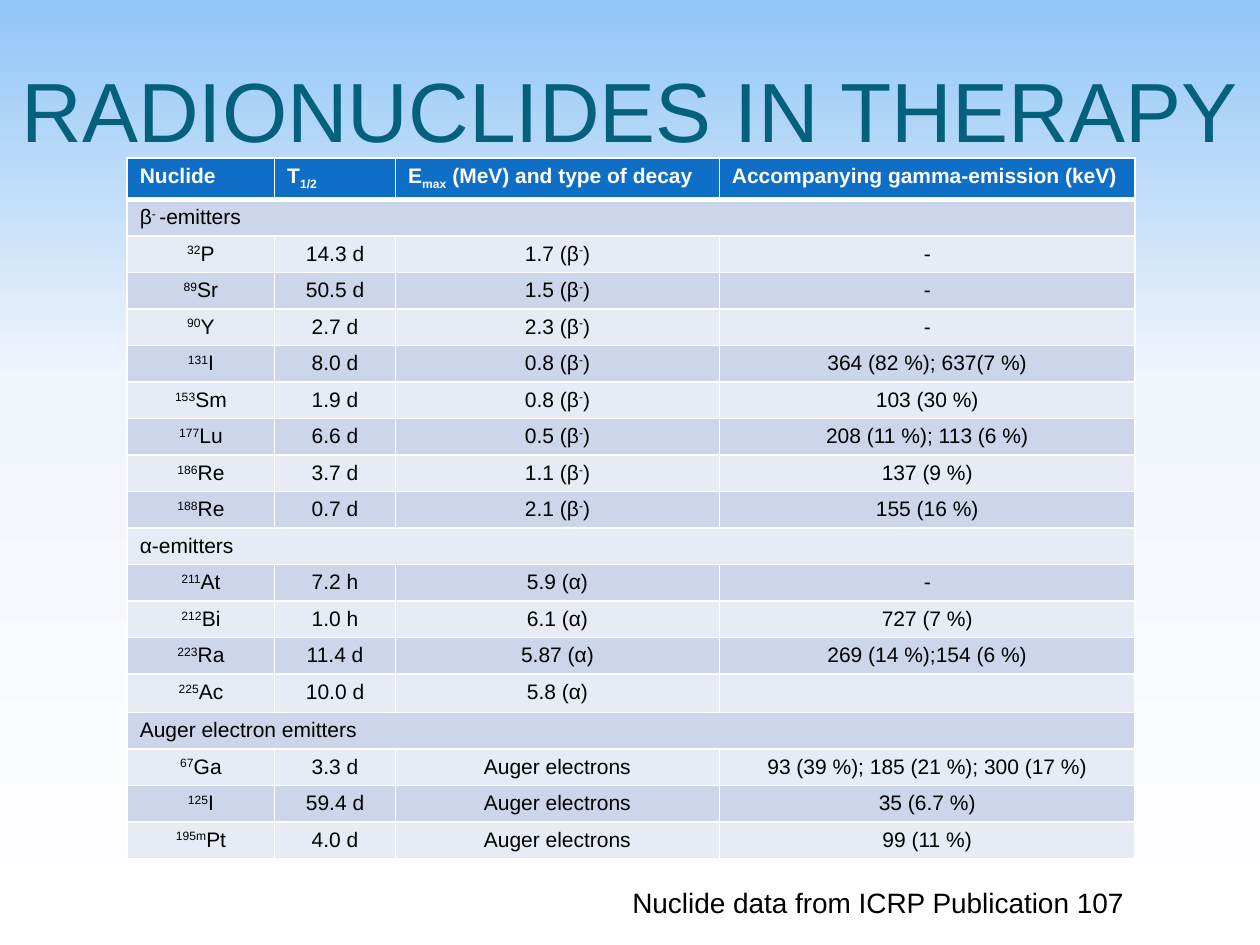
from copy import deepcopy
from dataclasses import dataclass

from lxml.etree import SubElement
from pptx import Presentation
from pptx.dml.color import RGBColor
from pptx.enum.text import MSO_ANCHOR, PP_ALIGN
from pptx.oxml.ns import qn
from pptx.util import Inches, Pt

SLIDE_WIDTH, SLIDE_HEIGHT = Inches(10), Inches(7.5)
COLUMN_SHARES = (0.117, 0.096, 0.257, 0.33)
HEADER_HEIGHT, ROW_HEIGHT = Inches(0.33), Inches(0.29)
SUPERSCRIPT, SUBSCRIPT = "30000", "-25000"
SHIFT_MARK = "|"


@dataclass(frozen=True)
class Theme:
    font: str = "Arial"
    title: str = "04617B"
    text: str = "000000"
    header: str = "0F6FC6"
    header_text: str = "FFFFFF"
    border: str = "FFFFFF"
    bands: tuple = ("E7EBF5", "CCD5EA")
    sky: tuple = ((0, "91C6F7"), (0.4, "F1F5FC"), (1, "FFFFFF"))
    title_size: int = 48
    table_size: int = 12
    caption_size: int = 16
    thin_line: int = 1
    thick_line: int = 3


@dataclass(frozen=True)
class Area:
    left: float
    top: float
    width: float
    height: float

    def lengths(self) -> tuple:
        return (int(self.left * SLIDE_WIDTH), int(self.top * SLIDE_HEIGHT),
                int(self.width * SLIDE_WIDTH), int(self.height * SLIDE_HEIGHT))


@dataclass(frozen=True)
class Nuclide:
    mass: str
    symbol: str
    half_life: str
    decay: str
    gamma: str = "-"

    def texts(self) -> tuple:
        return (f"|{self.mass}|{self.symbol}", self.half_life, self.decay, self.gamma)


@dataclass(frozen=True)
class Group:
    name: str
    nuclides: tuple


THEME = Theme()
TITLE_AREA = Area(0, 0.028, 1, 0.167)
TABLE_AREA = Area(0.101, 0.167, 0.8, 0.74)
CAPTION_AREA = Area(0.492, 0.931, 0.423, 0.056)
HEADERS = ("Nuclide", "T|1/2|", "E|max| (MeV) and type of decay",
           "Accompanying gamma-emission (keV)")
GROUPS = (
    Group("β|- |-emitters", (
        Nuclide("32", "P", "14.3 d", "1.7 (β|-|)"),
        Nuclide("89", "Sr", "50.5 d", "1.5 (β|-|)"),
        Nuclide("90", "Y", "2.7 d", "2.3 (β|-|)"),
        Nuclide("131", "I", "8.0 d", "0.8 (β|-|)", "364 (82 %); 637(7 %)"),
        Nuclide("153", "Sm", "1.9 d", "0.8 (β|-|)", "103 (30 %)"),
        Nuclide("177", "Lu", "6.6 d", "0.5 (β|-|)", "208 (11 %); 113 (6 %)"),
        Nuclide("186", "Re", "3.7 d", "1.1 (β|-|)", "137 (9 %)"),
        Nuclide("188", "Re", "0.7 d", "2.1 (β|-|)", "155 (16 %)"),
    )),
    Group("α-emitters", (
        Nuclide("211", "At", "7.2 h", "5.9 (α)"),
        Nuclide("212", "Bi", "1.0 h", "6.1 (α)", "727 (7 %)"),
        Nuclide("223", "Ra", "11.4 d", "5.87 (α)", "269 (14 %);154 (6 %)"),
        Nuclide("225", "Ac", "10.0 d", "5.8 (α)", ""),
    )),
    Group("Auger electron emitters", (
        Nuclide("67", "Ga", "3.3 d", "Auger electrons", "93 (39 %); 185 (21 %); 300 (17 %)"),
        Nuclide("125", "I", "59.4 d", "Auger electrons", "35 (6.7 %)"),
        Nuclide("195m", "Pt", "4.0 d", "Auger electrons", "99 (11 %)"),
    )),
)


def style_font(font, size: int, color: str, bold: bool = False) -> None:
    font.name = THEME.font
    font.size = Pt(size)
    font.bold = bold
    font.color.rgb = RGBColor.from_string(color)


def paint_background(slide) -> None:
    fill = slide.background.fill
    fill.gradient()
    fill.gradient_angle = 270
    first_stop = fill.gradient_stops[0]._gs
    first_stop.addnext(deepcopy(first_stop))
    for stop, (position, color) in zip(fill.gradient_stops, THEME.sky):
        stop.position = position
        stop.color.rgb = RGBColor.from_string(color)


def place_title(slide, text: str) -> None:
    title = slide.shapes.title
    title.left, title.top, title.width, title.height = TITLE_AREA.lengths()
    frame = title.text_frame
    frame.text = text
    frame.margin_left = frame.margin_right = frame.margin_bottom = 0
    frame.vertical_anchor = MSO_ANCHOR.MIDDLE
    para = frame.paragraphs[0]
    para.alignment = PP_ALIGN.CENTER
    style_font(para.runs[0].font, THEME.title_size, THEME.title)


def add_caption(slide, text: str) -> None:
    frame = slide.shapes.add_textbox(*CAPTION_AREA.lengths()).text_frame
    frame.word_wrap = True
    frame.text = text
    style_font(frame.paragraphs[0].runs[0].font, THEME.caption_size, THEME.text)


def add_border(cell, side: str, width: int) -> None:
    properties = cell._tc.get_or_add_tcPr()
    line = SubElement(properties, qn(f"a:{side}"), w=str(Pt(width)))
    SubElement(SubElement(line, qn("a:solidFill")), qn("a:srgbClr"), val=THEME.border)


def write_cell(cell, text: str, alignment, shift: str, color: str, bold: bool) -> None:
    para = cell.text_frame.paragraphs[0]
    para.alignment = alignment
    for index, piece in enumerate(text.split(SHIFT_MARK)):
        if not piece:
            continue
        span = para.add_run()
        span.text = piece
        style_font(span.font, THEME.table_size, color, bold)
        if index % 2:
            span._r.get_or_add_rPr().set("baseline", shift)
    if not text:
        SubElement(para._p, qn("a:endParaRPr"), sz=str(THEME.table_size * 100))


def fill_row(table, row: int, texts: tuple) -> None:
    is_header = row == 0
    is_group = len(texts) == 1
    if is_group:
        table.cell(row, 0).merge(table.cell(row, len(COLUMN_SHARES) - 1))
        texts += ("",) * (len(COLUMN_SHARES) - 1)
    top = THEME.thick_line if row == 1 else THEME.thin_line
    bottom = THEME.thick_line if is_header else THEME.thin_line
    sides = {"lnL": THEME.thin_line, "lnR": THEME.thin_line, "lnT": top, "lnB": bottom}
    alignment = PP_ALIGN.LEFT if is_header or is_group else PP_ALIGN.CENTER
    shift = SUBSCRIPT if is_header else SUPERSCRIPT
    color = THEME.header_text if is_header else THEME.text
    fill = THEME.header if is_header else THEME.bands[row % 2]
    for column, text in enumerate(texts):
        cell = table.cell(row, column)
        for side, width in sides.items():
            add_border(cell, side, width)
        cell.fill.solid()
        cell.fill.fore_color.rgb = RGBColor.from_string(fill)
        write_cell(cell, text, alignment, shift, color, is_header)


def add_nuclide_table(slide) -> None:
    rows = [HEADERS]
    for group in GROUPS:
        rows.append((group.name,))
        rows.extend(nuclide.texts() for nuclide in group.nuclides)
    frame = slide.shapes.add_table(len(rows), len(COLUMN_SHARES), *TABLE_AREA.lengths())
    table = frame.table
    for column, share in zip(table.columns, COLUMN_SHARES):
        column.width = int(share * SLIDE_WIDTH)
    for index, texts in enumerate(rows):
        table.rows[index].height = ROW_HEIGHT if index else HEADER_HEIGHT
        fill_row(table, index, texts)


def main() -> None:
    deck = Presentation()
    deck.slide_width, deck.slide_height = SLIDE_WIDTH, SLIDE_HEIGHT
    page = deck.slides.add_slide(deck.slide_layouts[5])
    paint_background(page)
    place_title(page, "RADIONUCLIDES IN THERAPY")
    add_nuclide_table(page)
    add_caption(page, "Nuclide data from ICRP Publication 107")
    deck.save("out.pptx")


if __name__ == "__main__":
    main()
